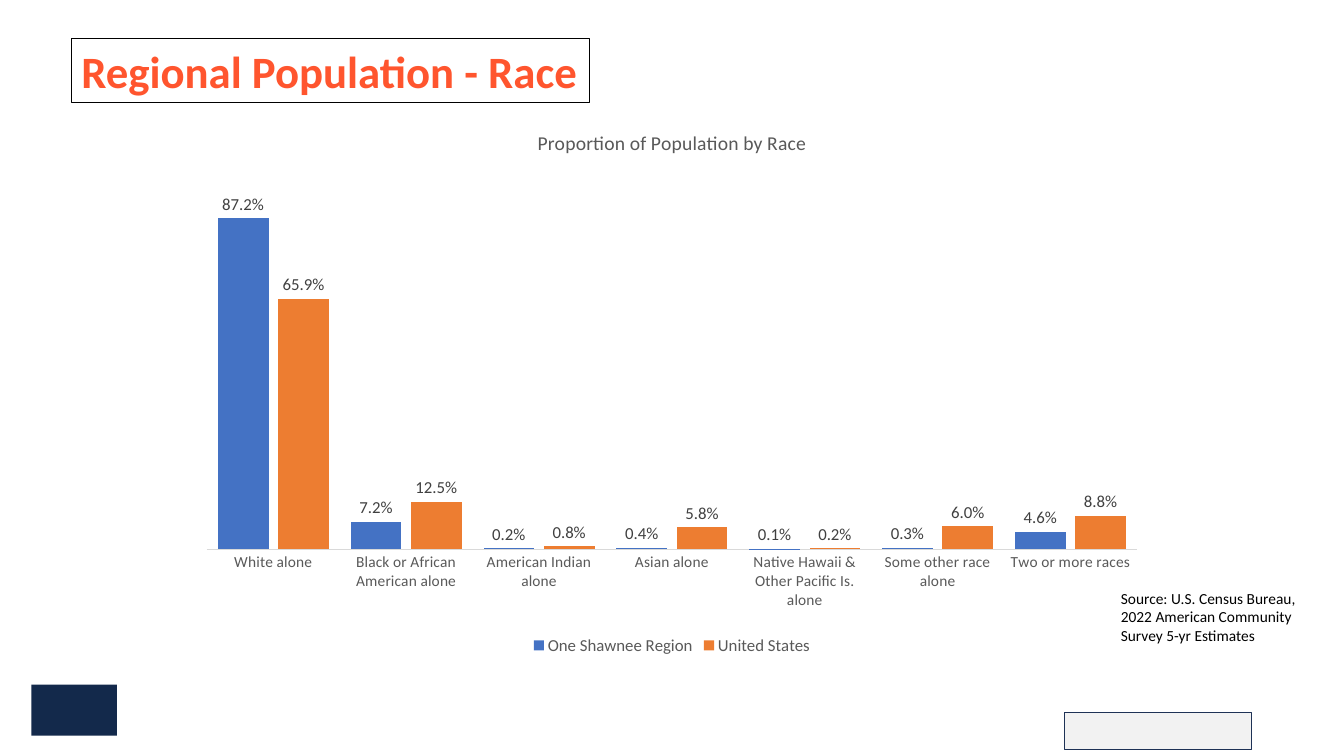
from lxml import etree
from pptx import Presentation
from pptx.chart.data import CategoryChartData
from pptx.dml.color import RGBColor
from pptx.enum.chart import XL_CHART_TYPE, XL_LABEL_POSITION, XL_LEGEND_POSITION, XL_TICK_MARK
from pptx.enum.shapes import MSO_SHAPE
from pptx.enum.text import MSO_ANCHOR, PP_ALIGN
from pptx.util import Pt

COLUMN = XL_CHART_TYPE.COLUMN_CLUSTERED
ABOVE = XL_LABEL_POSITION.OUTSIDE_END
BOTTOM = XL_LEGEND_POSITION.BOTTOM
NO_TICK = XL_TICK_MARK.NONE
RECT = MSO_SHAPE.RECTANGLE
MIDDLE, TOP = MSO_ANCHOR.MIDDLE, MSO_ANCHOR.TOP
LEFT = PP_ALIGN.LEFT

HEAD = "Regional Population - Race"
SOURCE = "Source: U.S. Census Bureau, 2022 American Community Survey 5-yr Estimates"
TITLE = "Proportion of Population by Race"
AREAS = ["One Shawnee Region", "United States"]
RACES = [
    ("White alone", 0.872, 0.659),
    ("Black or African American alone", 0.072, 0.125),
    ("American Indian alone", 0.002, 0.008),
    ("Asian alone", 0.004, 0.058),
    ("Native Hawaii & Other Pacific Is. alone", 0.001, 0.002),
    ("Some other race alone", 0.003, 0.06),
    ("Two or more races", 0.046, 0.088),
]

THEME = {
    "font": "Calibri",
    "bars": ["4472C4", "ED7D31"],
    "axis": "D9D9D9",
    "head": {"size": 32, "color": "FF552E", "bold": True},
    "source": {"size": 11, "color": "000000", "bold": False},
    "base": {"size": 10, "color": "000000", "bold": False},
    "title": {"size": 14, "color": "595959", "bold": False},
    "races": {"size": 11, "color": "595959", "bold": False},
    "legend": {"size": 12, "color": "595959", "bold": False},
    "labels": {"size": 12, "color": "404040", "bold": False},
}

# Left, top, width, height in points
SPOTS = {
    "badge": (22.5, 489, 61, 36.5),
    "panel": (760.5, 509, 133.5, 26.5),
    "head": (51, 27.5, 370, 46),
    "source": (793.5, 417, 157.5, 47.5),
    "chart": (134, 78, 692, 393),
}
BOXES = [
    ("badge", "13294B", None, 0),
    ("panel", "F2F2F2", "1E3256", 1),
    ("head", None, "000000", 0.75),
]
PLOT = {"x": 0.02, "y": 0.11, "w": 0.96, "h": 0.69}
PERCENT = "0.0%"


def place(name):
    return [Pt(n) for n in SPOTS[name]]


def assign(thing, **values):
    for key, value in values.items():
        setattr(thing, key, value)


def style(font, role):
    look = THEME[role]
    assign(font, name=THEME["font"], size=Pt(look["size"]), bold=look["bold"])
    font.color.rgb = RGBColor.from_string(look["color"])


def paint(fill, color):
    if color:
        fill.solid()
        fill.fore_color.rgb = RGBColor.from_string(color)
    else:
        fill.background()


def write(shape, text, role, anchor):
    frame = shape.text_frame
    assign(frame, word_wrap=True, vertical_anchor=anchor)
    line = frame.paragraphs[0]
    line.alignment = LEFT
    run = line.add_run()
    run.text = text
    style(run.font, role)


def add_box(slide, name, fill, edge, width):
    box = slide.shapes.add_shape(RECT, *place(name))
    box.shadow.inherit = False
    paint(box.fill, fill)
    paint(box.line.fill, edge)
    if edge:
        box.line.width = Pt(width)
    return box


def fix_plot(chart):
    """Pin the inner plot area to set fractions of the chart."""
    area = chart.plots[0]._element.getparent()
    space = "{" + area.nsmap["c"] + "}"
    for old in area.findall(space + "layout"):
        area.remove(old)
    layout = etree.Element(space + "layout")
    manual = etree.SubElement(layout, space + "manualLayout")
    values = {"layoutTarget": "inner", "xMode": "edge", "yMode": "edge", **PLOT}
    for tag, value in values.items():
        etree.SubElement(manual, space + tag, val=str(value))
    area.insert(0, layout)


def add_bars(slide):
    data = CategoryChartData(number_format=PERCENT)
    names, *columns = zip(*RACES)
    data.categories = names
    for area, values in zip(AREAS, columns):
        data.add_series(area, values)
    chart = slide.shapes.add_chart(COLUMN, *place("chart"), data).chart
    style(chart.font, "base")

    assign(chart, has_title=True, has_legend=True)
    run = chart.chart_title.text_frame.paragraphs[0].add_run()
    run.text = TITLE
    style(run.font, "title")
    chart.chart_title.include_in_layout = False
    assign(chart.legend, position=BOTTOM, include_in_layout=False)
    style(chart.legend.font, "legend")

    races = chart.category_axis
    assign(races, major_tick_mark=NO_TICK, minor_tick_mark=NO_TICK)
    style(races.tick_labels.font, "races")
    paint(races.format.line.fill, THEME["axis"])
    races.format.line.width = Pt(0.75)
    assign(chart.value_axis, visible=False, has_major_gridlines=False,
           minimum_scale=0, maximum_scale=1)

    plot = chart.plots[0]
    assign(plot, gap_width=43, overlap=-19, vary_by_categories=False)
    for series, color in zip(plot.series, THEME["bars"]):
        paint(series.format.fill, color)
        series.invert_if_negative = False
        labels = series.data_labels
        assign(labels, show_value=True, position=ABOVE,
               number_format=PERCENT, number_format_is_linked=False)
        style(labels.font, "labels")
    fix_plot(chart)


def main():
    deck = Presentation()
    assign(deck, slide_width=Pt(960), slide_height=Pt(540))
    slide = deck.slides.add_slide(deck.slide_layouts[6])
    boxes = {spec_row[0]: add_box(slide, *spec_row) for spec_row in BOXES}
    write(boxes["head"], HEAD, "head", MIDDLE)
    write(slide.shapes.add_textbox(*place("source")), SOURCE, "source", TOP)
    add_bars(slide)
    deck.save("out.pptx")


if __name__ == "__main__":
    main()
